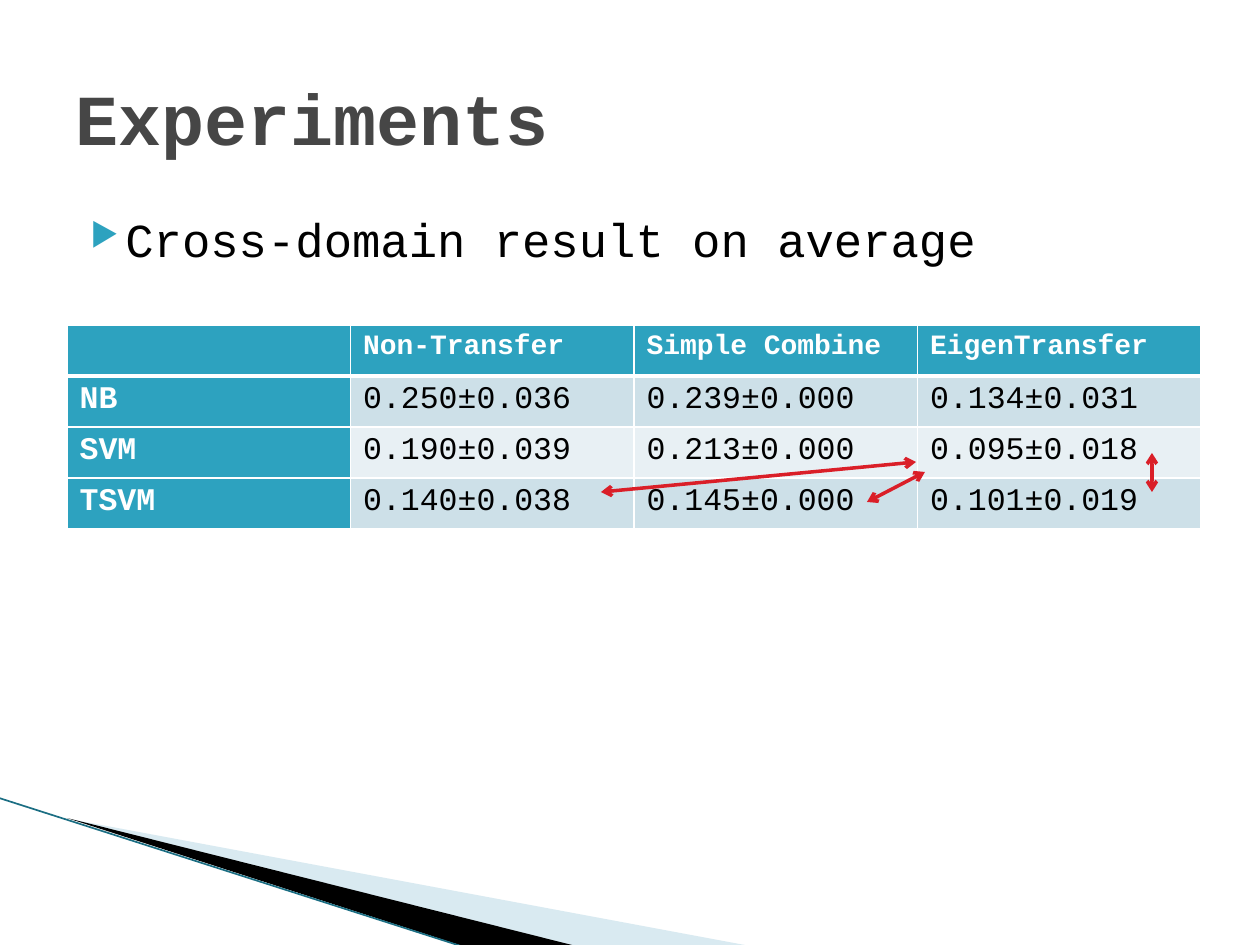
from lxml import etree
from pptx import Presentation
from pptx.dml.color import RGBColor
from pptx.enum.shapes import MSO_CONNECTOR
from pptx.enum.text import MSO_ANCHOR
from pptx.oxml import parse_xml
from pptx.oxml.ns import nsdecls, qn
from pptx.util import Pt

STRAIGHT = MSO_CONNECTOR.STRAIGHT
TOP, MIDDLE = MSO_ANCHOR.TOP, MSO_ANCHOR.MIDDLE
SCALE = 914400 / 126
FONT = "Courier New"
COLORS = {
    "title": "464646", "text": "000000", "white": "FFFFFF",
    "accent": "2DA2BF", "odd": "CDE0E8", "even": "E8F0F4",
    "arrow": "DA1F28", "wedge": "A0CBDC", "edge": "1B6E83",
}


def px(n):
    return round(n * SCALE)


def rgb(name):
    return RGBColor.from_string(COLORS[name])


def write(tf, text, size, color="text", bold=False):
    """Put text in the first paragraph and return that paragraph."""
    p = tf.paragraphs[0]
    r = p.add_run()
    r.text = text
    r.font.name, r.font.size, r.font.bold = FONT, Pt(size), bold
    r.font.color.rgb = rgb(color)
    return p


class SlideBuilder:
    def __init__(self, slide):
        self.slide = slide
        self.shapes = slide.shapes

    def text(self, x, y, w, h, text, size, anchor=TOP, **fmt):
        tf = self.shapes.add_textbox(px(x), px(y), px(w), px(h)).text_frame
        tf.word_wrap = True
        tf.vertical_anchor = anchor
        return write(tf, text, size, **fmt)

    def bullet(self, p, margin, indent):
        pPr = p._p.get_or_add_pPr()
        pPr.set("marL", str(px(margin)))
        pPr.set("indent", str(px(indent)))
        color = etree.SubElement(pPr, qn("a:buClr"))
        etree.SubElement(color, qn("a:srgbClr"), val=COLORS["accent"])
        etree.SubElement(pPr, qn("a:buSzPct"), val="68000")
        etree.SubElement(pPr, qn("a:buChar"), char="▶")
        p.space_before = Pt(4)

    def polygon(self, points, color, alpha=None):
        fb = self.shapes.build_freeform(*points[0], scale=SCALE)
        fb.add_line_segments(points[1:])
        sp = fb.convert_to_shape()
        sp.shadow.inherit = False
        sp.line.fill.background()
        sp.fill.solid()
        sp.fill.fore_color.rgb = rgb(color)
        if alpha:
            clr = sp._element.spPr.find(".//" + qn("a:srgbClr"))
            etree.SubElement(clr, qn("a:alpha"), val=str(alpha * 1000))

    def line(self, start, end, color, width, arrows=False):
        c = self.shapes.add_connector(STRAIGHT, *map(px, start + end))
        c.line.color.rgb = rgb(color)
        c.line.width = Pt(width)
        if arrows:
            ln = c.line._get_or_add_ln()
            for tag in ("a:headEnd", "a:tailEnd"):
                etree.SubElement(ln, qn(tag), type="arrow")
        etree.SubElement(c._element.spPr, qn("a:effectLst"))

    def borders(self, cell, top, bottom):
        tcPr = cell._tc.get_or_add_tcPr()
        for side, width in (("L", 1), ("R", 1), ("T", top), ("B", bottom)):
            tcPr.append(parse_xml(
                f'<a:ln{side} {nsdecls("a")} w="{Pt(width)}"><a:solidFill>'
                f'<a:srgbClr val="{COLORS["white"]}"/></a:solidFill></a:ln{side}>'))

    def table(self, x, y, w, h, rows):
        frame = self.shapes.add_table(len(rows), len(rows[0]),
                                      px(x), px(y), px(w), px(h))
        for i, row in enumerate(rows):
            for j, value in enumerate(row):
                cell = frame.table.cell(i, j)
                self.borders(cell, 3 if i == 1 else 1, 3 if i == 0 else 1)
                heading = i == 0 or j == 0
                band = "odd" if i % 2 else "even"
                cell.fill.solid()
                cell.fill.fore_color.rgb = rgb("accent" if heading else band)
                if value:
                    write(cell.text_frame, value, 18 if i else 16,
                          color="white" if heading else "text", bold=heading)


def main():
    prs = Presentation()
    prs.slide_width, prs.slide_height = px(1260), px(945)
    s = SlideBuilder(prs.slides.add_slide(prs.slide_layouts[6]))

    # Corner decoration
    s.polygon([(69, 819), (750, 946), (575, 946)], "wedge", alpha=40)
    s.polygon([(67, 818), (576, 946), (469, 948)], "text")
    s.line((-1, 798), (467, 948), "edge", 0.95)

    # Bullet and title
    p = s.text(63, 204, 1134, 624, "Cross-domain result on average", 27)
    s.bullet(p, 50, -35)
    s.text(63, 38, 1134, 158, "Experiments", 41, anchor=MIDDLE,
           color="title", bold=True)

    # Results table
    s.table(67, 325, 1134, 204, [
        ["", "Non-Transfer", "Simple Combine", "EigenTransfer"],
        ["NB", "0.250±0.036", "0.239±0.000", "0.134±0.031"],
        ["SVM", "0.190±0.039", "0.213±0.000", "0.095±0.018"],
        ["TSVM", "0.140±0.038", "0.145±0.000", "0.101±0.019"],
    ])

    # Comparison arrows
    for start, end in [((925, 472), (867, 502)),
                       ((916, 462), (601, 492)),
                       ((1152, 453), (1152, 492))]:
        s.line(start, end, "arrow", 2, arrows=True)

    prs.save("out.pptx")


if __name__ == "__main__":
    main()
